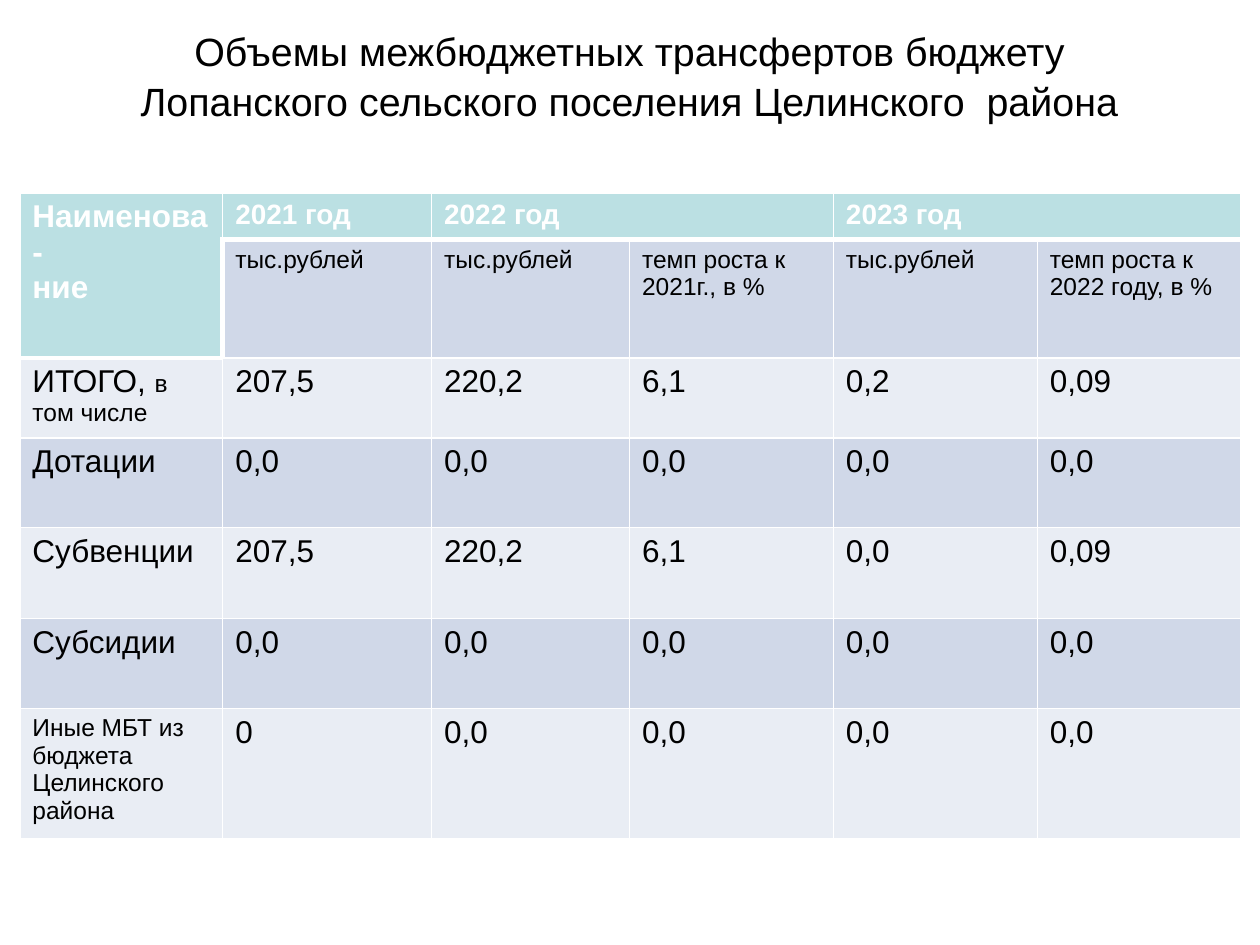
"""Build a slide with a table of budget transfers to a rural settlement."""
from dataclasses import dataclass

import lxml.etree
import pptx
import pptx.dml.color
import pptx.enum.text
import pptx.oxml.ns
import pptx.slide
import pptx.table
import pptx.text.text
import pptx.util

Cm = pptx.util.Cm
Pt = pptx.util.Pt

FONT = "Arial"
WHITE = "FFFFFF"
BLACK = "000000"
HEADING_FILL = "BBE0E3"
BAND_FILLS = ("D0D8E8", "E9EDF4")
THIN, THICK = 1, 3
COLUMN_WIDTHS = (4.09, 4.21, 3.99, 4.11, 4.11, 4.1)
ROW_HEIGHTS = (0.94, 2.03, 1.61, 1.81, 1.83, 1.81, 2.62)
TITLE = "Объемы межбюджетных трансфертов бюджету Лопанского сельского поселения Целинского  района"


@dataclass(frozen=True)
class Wording:
    text: str
    size: float
    color: str = BLACK
    bold: bool = False


@dataclass(frozen=True)
class Heading:
    column: int
    lines: tuple[str, ...]
    size: float
    last_row: int
    last_column: int


@dataclass(frozen=True)
class Transfer:
    label: tuple[Wording, ...]
    amounts: tuple[str, ...]


HEADINGS = (
    Heading(0, ("Наименова-", "ние"), 18, 1, 0),
    Heading(1, ("2021 год",), 16, 0, 1),
    Heading(2, ("2022 год",), 16, 0, 3),
    Heading(4, ("2023 год",), 16, 0, 5),
)
UNITS = (
    "тыс.рублей",
    "тыс.рублей",
    "темп роста к 2021г., в %",
    "тыс.рублей",
    "темп роста к 2022 году, в %",
)
TRANSFERS = (
    Transfer((Wording("ИТОГО, ", 18), Wording("в том числе", 14)), ("207,5", "220,2", "6,1", "0,2", "0,09")),
    Transfer((Wording("Дотации", 18),), ("0,0",) * 5),
    Transfer((Wording("Субвенции", 18),), ("207,5", "220,2", "6,1", "0,0", "0,09")),
    Transfer((Wording("Субсидии", 18),), ("0,0",) * 5),
    Transfer((Wording("Иные МБТ из бюджета Целинского района", 14),), ("0",) + ("0,0",) * 4),
)


def rgb(value: str) -> pptx.dml.color.RGBColor:
    """Turn a hex string into a colour."""
    return pptx.dml.color.RGBColor.from_string(value)


def write(paragraph: pptx.text.text._Paragraph, wording: Wording) -> None:
    """Add one formatted run to a paragraph."""
    run = paragraph.add_run()
    run.text = wording.text
    run.font.name = FONT
    run.font.size = Pt(wording.size)
    run.font.bold = wording.bold
    run.font.color.rgb = rgb(wording.color)


def write_cell(cell: pptx.table._Cell, paragraphs: tuple[tuple[Wording, ...], ...]) -> None:
    """Write paragraphs, each a sequence of runs, into a cell."""
    for index, wordings in enumerate(paragraphs):
        frame = cell.text_frame
        paragraph = frame.add_paragraph() if index else frame.paragraphs[0]
        for wording in wordings:
            write(paragraph, wording)


def border(cell: pptx.table._Cell, row: int, column: int) -> None:
    """Draw white borders, thick below and beside the headings."""
    heading = row == 0 or (row == 1 and column == 0)
    below_heading = (row == 1 and column > 0) or (row == 2 and column == 0)
    widths = {
        "a:lnL": THICK if (row, column) == (1, 1) else THIN,
        "a:lnR": THIN,
        "a:lnT": THICK if below_heading else THIN,
        "a:lnB": THICK if heading else THIN,
    }
    qn = pptx.oxml.ns.qn
    properties = cell._tc.get_or_add_tcPr()
    for edge, width in widths.items():
        line = lxml.etree.SubElement(properties, qn(edge), w=str(Pt(width)))
        fill = lxml.etree.SubElement(line, qn("a:solidFill"))
        lxml.etree.SubElement(fill, qn("a:srgbClr"), val=WHITE)


def add_title(slide: pptx.slide.Slide) -> None:
    """Place the slide title."""
    title = slide.shapes.title
    title.left, title.top, title.width, title.height = Cm(1.9), Cm(0.4), Cm(21.6), Cm(2.2)
    frame = title.text_frame
    frame.word_wrap = True
    frame.auto_size = pptx.enum.text.MSO_AUTO_SIZE.NONE
    frame.vertical_anchor = pptx.enum.text.MSO_ANCHOR.MIDDLE
    paragraph = frame.paragraphs[0]
    paragraph.alignment = pptx.enum.text.PP_ALIGN.CENTER
    paragraph.line_spacing = 1.06
    write(paragraph, Wording(TITLE, 22.5))


def add_transfers(slide: pptx.slide.Slide) -> None:
    """Add the table of transfers by year."""
    table = slide.shapes.add_table(
        len(ROW_HEIGHTS), len(COLUMN_WIDTHS), Cm(0.4), Cm(3.89),
        Cm(sum(COLUMN_WIDTHS)), Cm(sum(ROW_HEIGHTS)),
    ).table
    table.first_row = table.horz_banding = False
    for column, width in zip(table.columns, COLUMN_WIDTHS):
        column.width = Cm(width)
    for row, height in enumerate(ROW_HEIGHTS):
        table.rows[row].height = Cm(height)
        for column in range(len(COLUMN_WIDTHS)):
            cell = table.cell(row, column)
            border(cell, row, column)
            heading = row == 0 or (row == 1 and column == 0)
            cell.fill.solid()
            cell.fill.fore_color.rgb = rgb(HEADING_FILL if heading else BAND_FILLS[(row - 1) % 2])

    for heading in HEADINGS:
        cell = table.cell(0, heading.column)
        last = table.cell(heading.last_row, heading.last_column)
        if (heading.last_row, heading.last_column) != (0, heading.column):
            cell.merge(last)
        write_cell(cell, tuple((Wording(line, heading.size, WHITE, True),) for line in heading.lines))
    for column, unit in enumerate(UNITS, 1):
        write_cell(table.cell(1, column), ((Wording(unit, 14),),))
    for row, transfer in enumerate(TRANSFERS, 2):
        write_cell(table.cell(row, 0), (transfer.label,))
        for column, amount in enumerate(transfer.amounts, 1):
            write_cell(table.cell(row, column), ((Wording(amount, 18),),))


def main() -> None:
    """Build and save the presentation."""
    presentation = pptx.Presentation()
    presentation.slide_width, presentation.slide_height = Cm(25.4), Cm(19.05)
    slide = presentation.slides.add_slide(presentation.slide_layouts[5])
    add_title(slide)
    add_transfers(slide)
    presentation.save("out.pptx")


if __name__ == "__main__":
    main()
